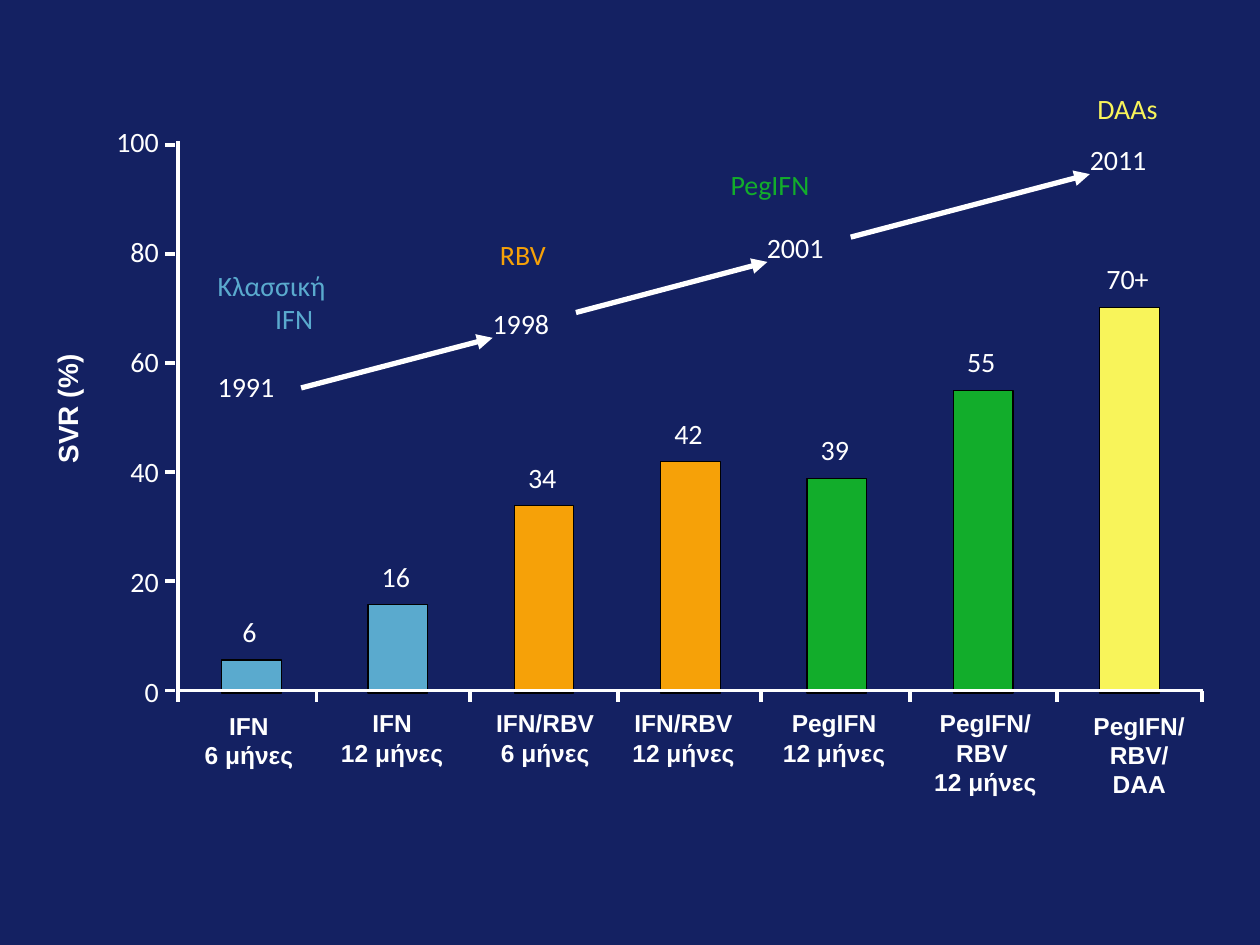
from dataclasses import dataclass

from lxml.etree import SubElement
from pptx import Presentation
from pptx.dml.color import RGBColor
from pptx.enum.shapes import MSO_CONNECTOR as Conn, MSO_SHAPE as Shape
from pptx.enum.text import PP_ALIGN as Align
from pptx.oxml.ns import qn
from pptx.util import Cm, Pt

COLORS = {
    "navy": "142162", "white": "FFFFFF", "black": "000000", "blue": "5AAACE",
    "orange": "F6A108", "green": "12AD2B", "yellow": "F8F45A",
}
PLAIN = {"name": "Calibri", "size": Pt(16)}
AXIS_TITLE = {"name": "Arial", "size": Pt(16), "bold": True}
CATEGORY = {"name": "Arial", "size": Pt(14), "bold": True}

# All lengths are in centimetres.
BAR_LEFT, BAR_STEP, BAR_WIDTH, BAR_BOTTOM = 4.47, 2.95, 1.2, 13.97
CM_PER_PERCENT = 0.11 + 0.001
AXIS_X, AXIS_Y, AXIS_TOP, AXIS_RIGHT = 3.58, 13.92, 2.84, 24.26
X_TICKS = (3.58, 6.38, 9.47, 12.45, 15.34, 18.34, 21.31, 24.23)


@dataclass(frozen=True)
class Label:
    text: str
    left: float
    top: float
    width: float
    height: float = 1.07
    color: str = "white"
    aligns: tuple = (Align.LEFT,)


@dataclass(frozen=True)
class Bar:
    value: int
    color: str
    category: Label
    suffix: str = ""


@dataclass(frozen=True)
class Line:
    x1: float
    y1: float
    x2: float
    y2: float
    width: float = 2.25
    arrow: bool = False


def category(text: str, left: float, width: float, top: float = 14.15) -> Label:
    return Label(text, left, top, width, 2.46, aligns=(Align.CENTER,))


BARS = (
    Bar(6, "blue", category("IFN\n6 μήνες", 3.66, 2.72, 14.2)),
    Bar(16, "blue", category("IFN\n12 μήνες", 6.43, 2.95)),
    Bar(34, "orange", category("IFN/RBV\n6 μήνες", 9.3, 3.38)),
    Bar(42, "orange", category("IFN/RBV\n12 μήνες", 12.09, 3.38)),
    Bar(39, "green", category("PegIFN\n12 μήνες", 15.34, 2.95)),
    Bar(55, "green", category("PegIFN/ RBV \v12 μήνες", 18.11, 3.51)),
    Bar(70, "yellow", category("PegIFN/\nRBV/\nDAA", 21.62, 2.69, 14.2), "+"),
)
MILESTONES = (
    Label("Κλασσική\nIFN", 4.14, 5.28, 3.58, 1.96, "blue", (Align.LEFT, Align.CENTER)),
    Label("1991", 4.14, 7.32, 2.03),
    Label("RBV", 9.83, 4.67, 2.01, color="orange"),
    Label("1998", 9.68, 6.05, 2.03),
    Label("PegIFN", 14.48, 3.25, 2.82, color="green"),
    Label("2001", 15.21, 4.52, 2.03),
    Label("DAAs", 21.56, 1.73, 2.34, color="yellow", aligns=(Align.CENTER,)),
    Label("2011", 21.72, 2.74, 2.03),
)
ARROWS = (
    Line(6.07, 7.82, 9.93, 6.81, 3, True),
    Line(11.61, 6.3, 15.47, 5.28, 3, True),
    Line(17.15, 4.78, 21.97, 3.51, 3, True),
)


def rgb(name: str) -> RGBColor:
    return RGBColor.from_string(COLORS[name])


def add_label(s, label: Label, font: dict, inset: bool = True, rotation: float = 0) -> None:
    """Add a text box; the last alignment serves all remaining paragraphs."""
    box = s.shapes.add_textbox(
        Cm(label.left), Cm(label.top), Cm(label.width), Cm(label.height))
    box.rotation = rotation
    tf = box.text_frame
    tf.word_wrap = True
    if not inset:
        for side in ("left", "top", "right", "bottom"):
            setattr(tf, f"margin_{side}", 0)
    tf.text = label.text
    for i, p in enumerate(tf.paragraphs):
        p.alignment = label.aligns[min(i, len(label.aligns) - 1)]
        for r in p.runs:
            for key, value in font.items():
                setattr(r.font, key, value)
            r.font.color.rgb = rgb(label.color)


def add_line(s, line: Line) -> None:
    sp = s.shapes.add_connector(
        Conn.STRAIGHT, Cm(line.x1), Cm(line.y1), Cm(line.x2), Cm(line.y2))
    sp.line.color.rgb = rgb("white")
    sp.line.width = Pt(line.width)
    if line.arrow:
        SubElement(sp.line._get_or_add_ln(), qn("a:tailEnd"), type="triangle")
    SubElement(sp._element.spPr, qn("a:effectLst"))


def add_bar(s, index: int, bar: Bar) -> None:
    """Add a bar with its value above and its category below."""
    left = BAR_LEFT + index * BAR_STEP
    height = bar.value * CM_PER_PERCENT
    top = BAR_BOTTOM - height
    sp = s.shapes.add_shape(Shape.RECTANGLE, Cm(left), Cm(top), Cm(BAR_WIDTH), Cm(height))
    sp.shadow.inherit = False
    sp.fill.solid()
    sp.fill.fore_color.rgb = rgb(bar.color)
    sp.line.color.rgb = rgb("black")
    sp.line.width = Pt(0.75)
    value = Label(f"{bar.value}{bar.suffix}", left - 0.04, top - 0.92, BAR_WIDTH, 0.76,
                  aligns=(Align.CENTER,))
    add_label(s, value, PLAIN, inset=False)
    add_label(s, bar.category, CATEGORY)


def add_axes(s) -> None:
    add_line(s, Line(AXIS_X, AXIS_Y, AXIS_RIGHT, AXIS_Y))
    add_line(s, Line(AXIS_X, AXIS_Y, AXIS_X, AXIS_TOP))
    for i in range(6):
        y = AXIS_Y - 2.2 * i
        add_line(s, Line(3.33, y, 3.53, y))
        number = Label(str(20 * i), 2, 13.59 - 2.215 * i, 1.2, 0.74, aligns=(Align.RIGHT,))
        add_label(s, number, PLAIN, inset=False)
    for x in X_TICKS:
        add_line(s, Line(x, AXIS_Y, x, 14.15))
    title = Label("SVR (%)", -1.35, 7.75, 5.46, 0.99, aligns=(Align.CENTER,))
    add_label(s, title, AXIS_TITLE, rotation=269.6)


def main() -> None:
    prs = Presentation()
    prs.slide_width, prs.slide_height = Cm(25.4), Cm(19.05)
    s = prs.slides.add_slide(prs.slide_layouts[6])
    s.background.fill.solid()
    s.background.fill.fore_color.rgb = rgb("navy")
    for label in MILESTONES:
        add_label(s, label, PLAIN)
    for arrow in ARROWS:
        add_line(s, arrow)
    for i, bar in enumerate(BARS):
        add_bar(s, i, bar)
    add_axes(s)
    prs.save("out.pptx")


if __name__ == "__main__":
    main()
